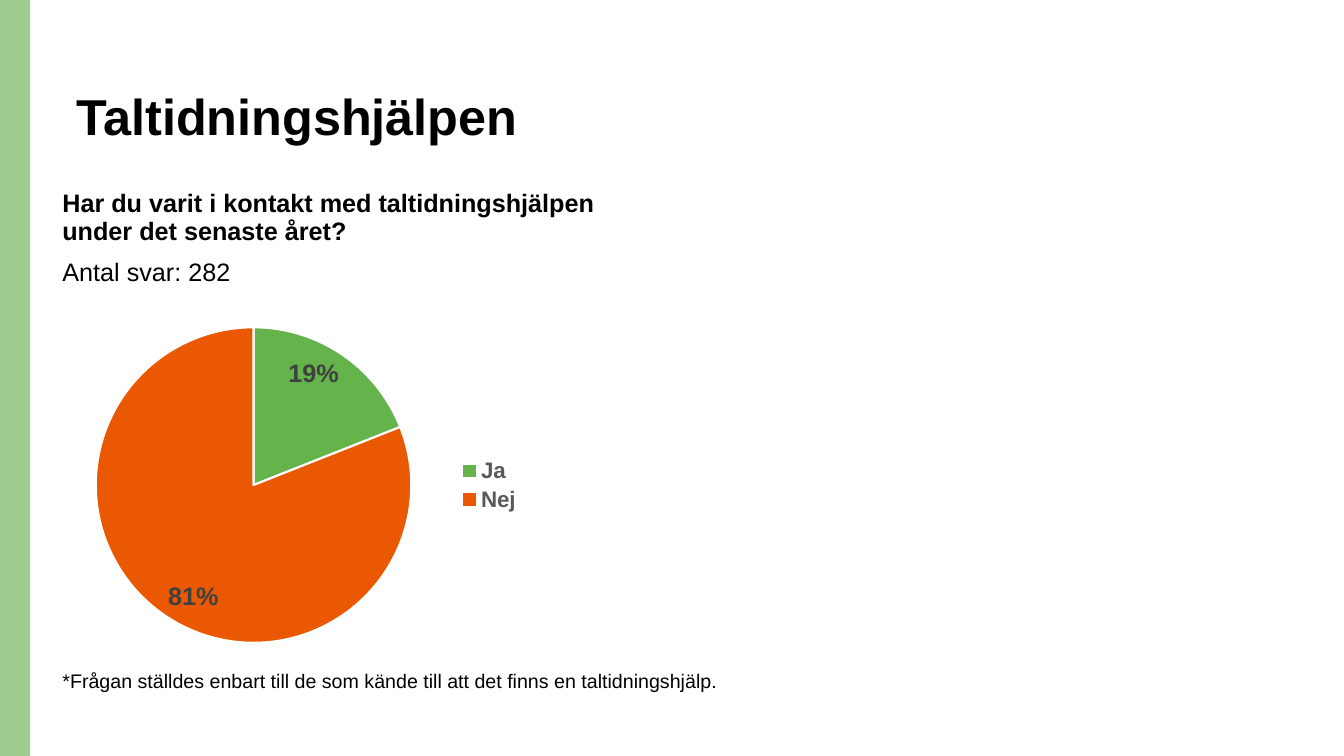
from dataclasses import dataclass

from lxml import etree
from pptx import Presentation
from pptx.chart.data import CategoryChartData
from pptx.dml.color import RGBColor
from pptx.enum import chart as ch, shapes, text
from pptx.oxml import ns
from pptx.util import Pt


@dataclass(frozen=True)
class Theme:
    font: str = "Arial"
    ink: str = "000000"
    white: str = "FFFFFF"
    band: str = "9DCC8F"
    yes: str = "64B34B"
    no: str = "EA5901"
    label: str = "404040"
    legend: str = "595959"
    title_size: int = 36
    body_size: int = 18
    legend_size: int = 16
    note_size: int = 14
    chart_size: int = 10


THEME = Theme()


def rgb(value):
    return RGBColor.from_string(value)


def style_font(font, size, color, bold=False):
    font.name = THEME.font
    font.size = Pt(size)
    font.bold = bold
    font.color.rgb = rgb(color)


def add_text(slide, box, lines, size, spacing=None, gap=0,
             anchor=text.MSO_ANCHOR.TOP, wrap=True):
    frame = slide.shapes.add_textbox(*map(Pt, box)).text_frame
    frame.word_wrap = wrap
    frame.vertical_anchor = anchor
    for index, (words, bold) in enumerate(lines):
        paragraph = frame.add_paragraph() if index else frame.paragraphs[0]
        paragraph.line_spacing = spacing
        if index:
            paragraph.space_before = Pt(gap)
        run = paragraph.add_run()
        run.text = words
        style_font(run.font, size, THEME.ink, bold)


def add_side_band(slide, box):
    band = slide.shapes.add_shape(shapes.MSO_SHAPE.RECTANGLE, *map(Pt, box))
    band.shadow.inherit = False
    band.fill.solid()
    band.fill.fore_color.rgb = rgb(THEME.band)
    band.line.fill.background()


def add_title(slide, box):
    add_text(slide, box, [("Taltidningshjälpen", True)], THEME.title_size,
             spacing=0.9, anchor=text.MSO_ANCHOR.BOTTOM)


def add_question(slide, box):
    question = "Har du varit i kontakt med taltidningshjälpen under det senaste året?"
    add_text(slide, box, [(question, True), ("Antal svar: 282", False)],
             THEME.body_size, spacing=0.9, gap=10)


def add_footnote(slide, box):
    note = "*Frågan ställdes enbart till de som kände till att det finns en taltidningshjälp."
    add_text(slide, box, [(note, False)], THEME.note_size, wrap=False)


def place_plot(chart, **fractions):
    plot_area = chart._chartSpace.chart.plotArea
    for old in plot_area.findall(ns.qn("c:layout")):
        plot_area.remove(old)
    layout = etree.Element(ns.qn("c:layout"))
    manual = etree.SubElement(layout, ns.qn("c:manualLayout"))
    settings = {"layoutTarget": "inner", "xMode": "edge", "yMode": "edge", **fractions}
    for tag, value in settings.items():
        etree.SubElement(manual, ns.qn(f"c:{tag}")).set("val", str(value))
    plot_area.insert(0, layout)


def add_answer_pie(slide, box):
    answers = CategoryChartData(number_format="0%")
    answers.categories = ["Ja", "Nej"]
    answers.add_series("Series 1", [0.19, 0.81])
    chart = slide.shapes.add_chart(ch.XL_CHART_TYPE.PIE, *map(Pt, box), answers).chart
    chart.has_title = False
    style_font(chart.font, THEME.chart_size, THEME.ink)

    chart.has_legend = True
    chart.legend.position = ch.XL_LEGEND_POSITION.RIGHT
    chart.legend.include_in_layout = False
    style_font(chart.legend.font, THEME.legend_size, THEME.legend, True)

    pie = chart.plots[0]
    pie.vary_by_categories = True
    for index, color in enumerate((THEME.yes, THEME.no)):
        slice_format = pie.series[0].points[index].format
        slice_format.fill.solid()
        slice_format.fill.fore_color.rgb = rgb(color)
        slice_format.line.color.rgb = rgb(THEME.white)
        slice_format.line.width = Pt(1.5)

    labels = pie.series[0].data_labels
    labels.show_value = True
    labels.number_format = "0%"
    labels.number_format_is_linked = False
    labels.position = ch.XL_LABEL_POSITION.INSIDE_END
    style_font(labels.font, THEME.body_size, THEME.label, True)
    place_plot(chart, x=0.09, y=0.04, w=0.66, h=0.92)


def main():
    deck = Presentation()
    deck.slide_width, deck.slide_height = Pt(960), Pt(540)
    slide = deck.slides.add_slide(deck.slide_layouts[6])
    left = 37.5
    add_side_band(slide, (0, 0, 21.5, 540))
    add_title(slide, (47.5, 36.5, 860, 71.5))
    add_question(slide, (left, 133, 407, 65))
    add_answer_pie(slide, (left, 224, 342, 245))
    add_footnote(slide, (left, 474.5, 488, 24.5))
    deck.save("out.pptx")


if __name__ == "__main__":
    main()
